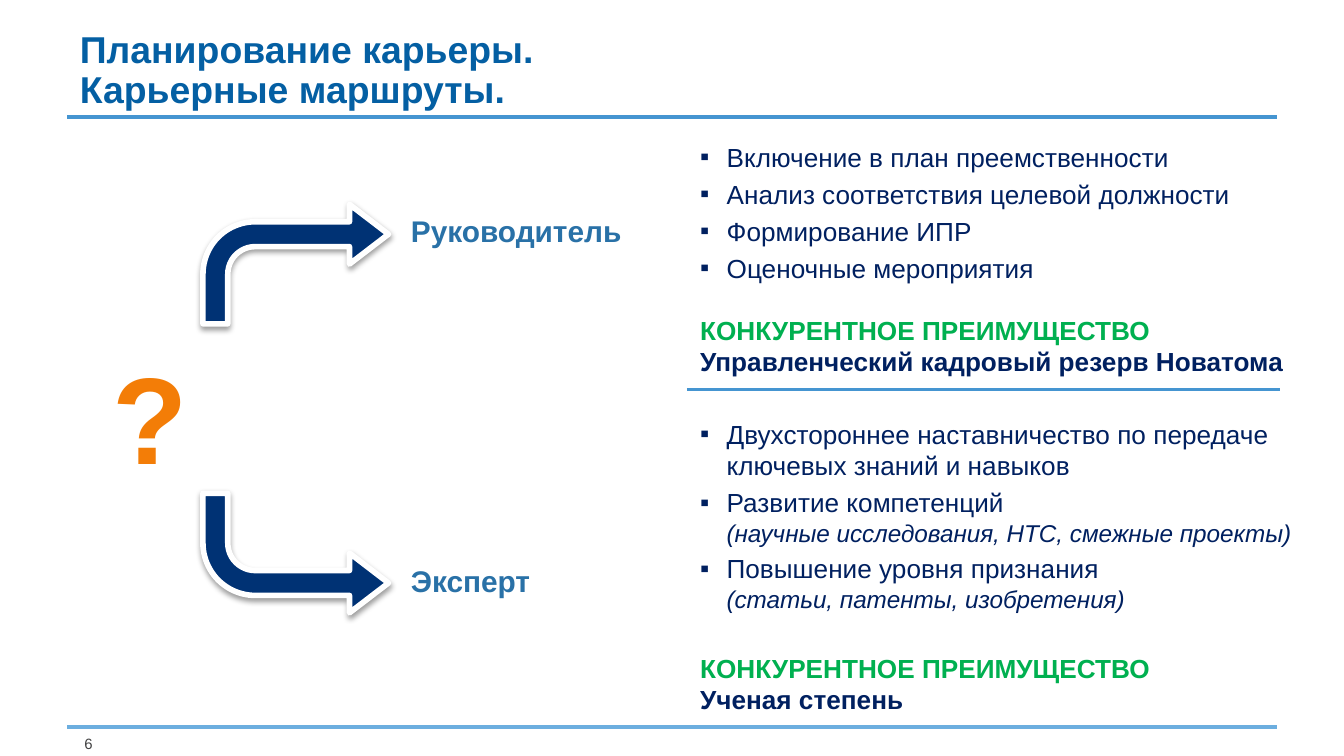
from lxml import etree
from pptx import Presentation
from pptx.dml.color import RGBColor
from pptx.enum import shapes as sh, text as tx
from pptx.oxml import ns
from pptx.util import Pt

BLUE = RGBColor(0x04, 0x5F, 0xA3)
STEEL = RGBColor(0x29, 0x71, 0xA7)
RULE = RGBColor(0x45, 0x95, 0xD1)
PALE = RGBColor(0x6C, 0xAE, 0xDF)
NAVY = RGBColor(0x00, 0x20, 0x60)
DEEP = RGBColor(0x00, 0x32, 0x74)
GREEN = RGBColor(0x00, 0xB0, 0x50)
ORANGE = RGBColor(0xF3, 0x7D, 0x07)
GREY = RGBColor(0x41, 0x41, 0x42)
WHITE = RGBColor(0xFF, 0xFF, 0xFF)

MARGIN = 36
RIGHT = 684
COLUMN = 368


def child(parent, tag, **attrs):
    return etree.SubElement(parent, ns.qn(tag), attrs)


def style(run, size, color, bold=False, italic=False):
    font = run.font
    font.name, font.size = "Arial", Pt(size)
    font.bold, font.italic = bold, italic
    font.color.rgb = color


def add_box(slide, box, wrap=True):
    frame = slide.shapes.add_textbox(*map(Pt, box)).text_frame
    frame.word_wrap = wrap
    return frame


def add_label(slide, box, words, size, color, bold=True, wrap=True):
    frame = add_box(slide, box, wrap)
    para = frame.paragraphs[0]
    para.text = words
    for run in para.runs:
        style(run, size, color, bold)
    return frame


def add_rule(slide, left, right, top, color, width):
    line = slide.shapes.add_connector(
        sh.MSO_CONNECTOR.STRAIGHT, Pt(left), Pt(top), Pt(right), Pt(top))
    line.line.color.rgb = color
    line.line.width = Pt(width)
    child(line._element.spPr, "a:effectLst")


def add_bullet(para):
    props = para._p.get_or_add_pPr()
    props.set("marL", str(Pt(14.2)))
    props.set("indent", str(-Pt(14.2)))
    child(props, "a:buFont", typeface="Arial")
    child(props, "a:buChar", char="▪")


def add_header(slide, box):
    left, top, width, height = box
    frame = add_label(slide, (left, top, 544, height),
                      "Планирование карьеры.\vКарьерные маршруты.", 20, BLUE)
    frame.vertical_anchor = tx.MSO_ANCHOR.BOTTOM
    frame.margin_left = frame.margin_right = Pt(6.75)
    frame.margin_top = frame.margin_bottom = Pt(3.2)
    frame.paragraphs[0].line_spacing = 0.9
    add_rule(slide, left, left + width, top + height - 0.5, RULE, 2.25)


def add_footer(slide, box, number):
    left, top, width, height = box
    add_rule(slide, left, left + width, top, PALE, 2.25)
    frame = add_label(slide, (left, top + 4.3, 13.7, height), number, 8, GREY,
                      bold=False, wrap=False)
    frame.margin_left = frame.margin_right = 0
    frame.margin_top = frame.margin_bottom = 0
    frame.paragraphs[0].alignment = tx.PP_ALIGN.RIGHT


def add_arrow(slide, box, down=False):
    arrow = slide.shapes.add_shape(sh.MSO_SHAPE.BENT_ARROW, *map(Pt, box))
    for i, value in enumerate((0.208, 0.25, 0.326, 0.438)):
        arrow.adjustments[i] = value
    arrow.fill.solid()
    arrow.fill.fore_color.rgb = DEEP
    arrow.line.color.rgb = WHITE
    arrow.line.width = Pt(3)
    if down:
        arrow.rotation = 180
        arrow._element.spPr.find(ns.qn("a:xfrm")).set("flipH", "1")
    effects = child(arrow._element.spPr, "a:effectLst")
    shadow = child(effects, "a:outerShdw", blurRad=str(Pt(3.1)),
                   dist=str(Pt(1.6)), dir="5400000", rotWithShape="0")
    child(child(shadow, "a:srgbClr", val="000000"), "a:alpha", val="38000")


def add_fork(slide, box):
    """A question mark from which two arrows lead to the two career routes."""
    left, top, width, height = box
    add_label(slide, (left, top + 69.8, 55.4, 87), "?", 66, ORANGE, wrap=False)
    tall = 64
    routes = (("Руководитель", top, top + 0.7, False),
              ("Эксперт", top + height - tall, top + height - 30.2, True))
    for name, y, label, down in routes:
        add_arrow(slide, (left + 55.4, y, 99.4, tall), down)
        add_label(slide, (left + 159.8, label, width - 159.8, 26.6),
                  name, 16, STEEL)


def add_route(slide, box, steps, gain, gap):
    """Bulleted steps, the detail after a line break in italics, then the gain."""
    frame = add_box(slide, box)
    for i, step in enumerate(steps):
        para = frame.add_paragraph() if i else frame.paragraphs[0]
        para.text = step
        add_bullet(para)
        para.space_after = Pt(3)
        head, *details = para.runs
        style(head, 14, NAVY)
        for run in details:
            style(run, 13, NAVY, italic=True)
    for words, color, space in (("КОНКУРЕНТНОЕ ПРЕИМУЩЕСТВО", GREEN, gap),
                                (gain, NAVY, 0)):
        para = frame.add_paragraph()
        para.text = words
        para.space_before = Pt(space)
        style(para.runs[0], 14, color, bold=True)


def main():
    deck = Presentation()
    deck.slide_width, deck.slide_height = Pt(720), Pt(405)
    slide = deck.slides.add_slide(deck.slide_layouts[6])

    add_footer(slide, (MARGIN, 389.5, RIGHT - MARGIN, 8), "6")
    add_header(slide, (MARGIN, 16.5, RIGHT - MARGIN, 46.5))
    add_fork(slide, (53.3, 109.5, 300, 218.8))
    add_route(slide, (COLUMN, 72, 348, 135),
              ("Включение в план преемственности",
               "Анализ соответствия целевой должности",
               "Формирование ИПР",
               "Оценочные мероприятия"),
              "Управленческий кадровый резерв Новатома", 13.5)
    add_rule(slide, COLUMN, 685.5, 208.8, RULE, 1.5)
    add_route(slide, (COLUMN, 220.5, 352, 168.5),
              ("Двухстороннее наставничество по передаче ключевых знаний и навыков",
               "Развитие компетенций\v(научные исследования, НТС, смежные проекты)",
               "Повышение уровня признания\v(статьи, патенты, изобретения)"),
              "Ученая степень", 18)
    deck.save("out.pptx")


if __name__ == "__main__":
    main()
